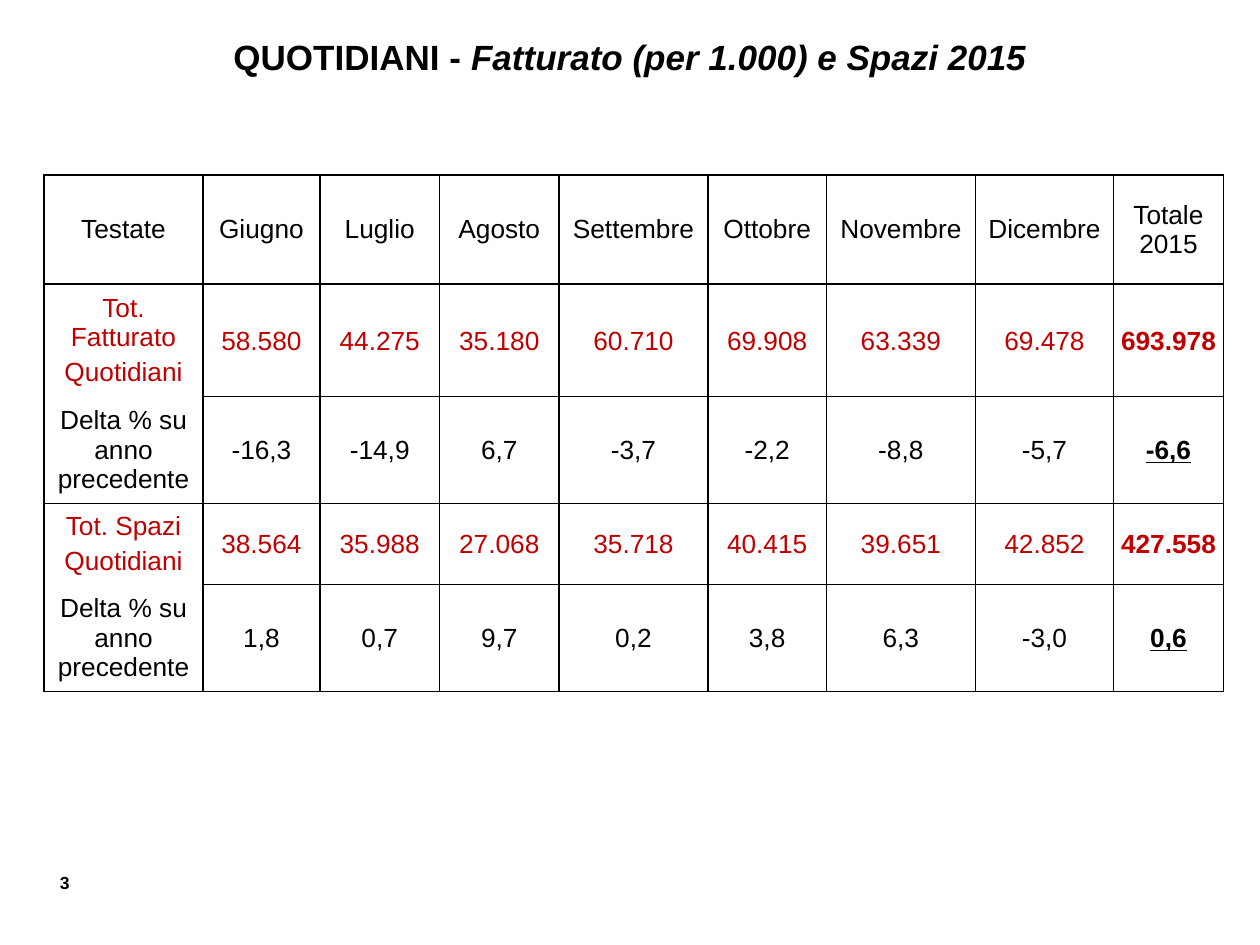
from lxml.etree import SubElement
from pptx import Presentation
from pptx.dml.color import RGBColor
from pptx.enum.text import MSO_ANCHOR as Anchor, MSO_AUTO_SIZE as AutoSize, PP_ALIGN as Align
from pptx.oxml.ns import qn
from pptx.util import Cm, Pt

BLACK, RED, WHITE = "000000", "C00000", "FFFFFF"
WIDTHS = [3.2, 2.36, 2.41, 2.41, 3, 2.39, 3, 2.79, 2.21]
HEIGHTS = [2.2, 2.26, 2.16, 1.63, 2.16]
DELTA = "Delta % su anno precedente"
ROWS = [
    ["Testate", "Giugno", "Luglio", "Agosto", "Settembre", "Ottobre", "Novembre",
     "Dicembre", "Totale\n2015"],
    ["Tot. Fatturato\nQuotidiani", "58.580", "44.275", "35.180", "60.710", "69.908",
     "63.339", "69.478", "693.978"],
    [DELTA, "-16,3", "-14,9", "6,7", "-3,7", "-2,2", "-8,8", "-5,7", "-6,6"],
    ["Tot. Spazi\nQuotidiani", "38.564", "35.988", "27.068", "35.718", "40.415",
     "39.651", "42.852", "427.558"],
    [DELTA, "1,8", "0,7", "9,7", "0,2", "3,8", "6,3", "-3,0", "0,6"],
]


def color(value):
    """Turn a hex string into a colour."""
    return RGBColor.from_string(value)


def format_para(para, size, align=Align.CENTER, bold=False, ink=BLACK):
    """Set the alignment and font of a paragraph."""
    para.alignment = align
    para.font.name = "Arial"
    para.font.size = Pt(size)
    para.font.bold = bold
    para.font.color.rgb = color(ink)


def add_title(page, plain, slanted):
    """Fill the title placeholder with a plain and an italic part."""
    title = page.shapes.title
    title.left, title.top, title.width, title.height = Cm(0), Cm(0.58), Cm(25.4), Cm(1.12)
    frame = title.text_frame
    frame.auto_size = AutoSize.NONE
    frame.vertical_anchor = Anchor.MIDDLE
    para = frame.paragraphs[0]
    para.add_run().text = plain
    span = para.add_run()
    span.text = slanted
    span.font.italic = True
    format_para(para, 20, bold=True)


def add_page_number(page, number):
    """Write the page number at the bottom left."""
    box = page.shapes.add_textbox(Cm(0.48), Cm(17.45), Cm(1.17), Cm(0.69))
    box.text_frame.word_wrap = True
    para = box.text_frame.paragraphs[0]
    para.text = number
    format_para(para, 10, Align.RIGHT, bold=True)


def set_borders(cell, hidden):
    """Draw thin black borders on a cell except on the hidden sides."""
    properties = cell._tc.get_or_add_tcPr()
    for side in "LRTB":
        line = SubElement(properties, qn(f"a:ln{side}"), w=str(Pt(1)))
        if side in hidden:
            SubElement(line, qn("a:noFill"))
        else:
            fill = SubElement(line, qn("a:solidFill"))
            SubElement(fill, qn("a:srgbClr"), val=BLACK)


def fill_cell(cell, text, row, column):
    """Write and format one cell by its place in the table."""
    is_total = row > 0 and column == len(WIDTHS) - 1
    is_amount = row % 2 == 1
    is_number = row > 0 and column > 0
    hidden = ""
    if row > 0 and column == 0:
        hidden = "B" if is_amount else "T"
    set_borders(cell, hidden)
    cell.fill.solid()
    cell.fill.fore_color.rgb = color(WHITE)
    cell.vertical_anchor = Anchor.MIDDLE
    cell.margin_left = cell.margin_right = Cm(0.03 if is_number else 0.25)
    cell.margin_top = Cm(0.03 if is_number else 0.13)
    cell.margin_bottom = Cm(0 if is_number else 0.13)
    cell.text = text
    for index, para in enumerate(cell.text_frame.paragraphs):
        format_para(para, 15, bold=is_total, ink=RED if is_amount else BLACK)
        if is_total and not is_amount:
            para.font.underline = True
        if index and column == 0:
            para.space_before = Pt(3)


def add_figures(page):
    """Add the table of monthly revenue and space."""
    table = page.shapes.add_table(len(ROWS), len(WIDTHS), Cm(0.89), Cm(3.53),
                                  Cm(sum(WIDTHS)), Cm(sum(HEIGHTS))).table
    table.first_row = table.horz_banding = False
    for column, width in zip(table.columns, WIDTHS):
        column.width = Cm(width)
    for row, height in zip(table.rows, HEIGHTS):
        row.height = Cm(height)
    for row, texts in enumerate(ROWS):
        for column, text in enumerate(texts):
            fill_cell(table.cell(row, column), text, row, column)


def main():
    """Build and save the slide."""
    deck = Presentation()
    deck.slide_width, deck.slide_height = Cm(25.4), Cm(19.05)
    page = deck.slides.add_slide(deck.slide_layouts[5])
    add_title(page, "QUOTIDIANI - ", "Fatturato (per 1.000) e Spazi 2015")
    add_figures(page)
    add_page_number(page, "3")
    deck.save("out.pptx")


if __name__ == "__main__":
    main()
